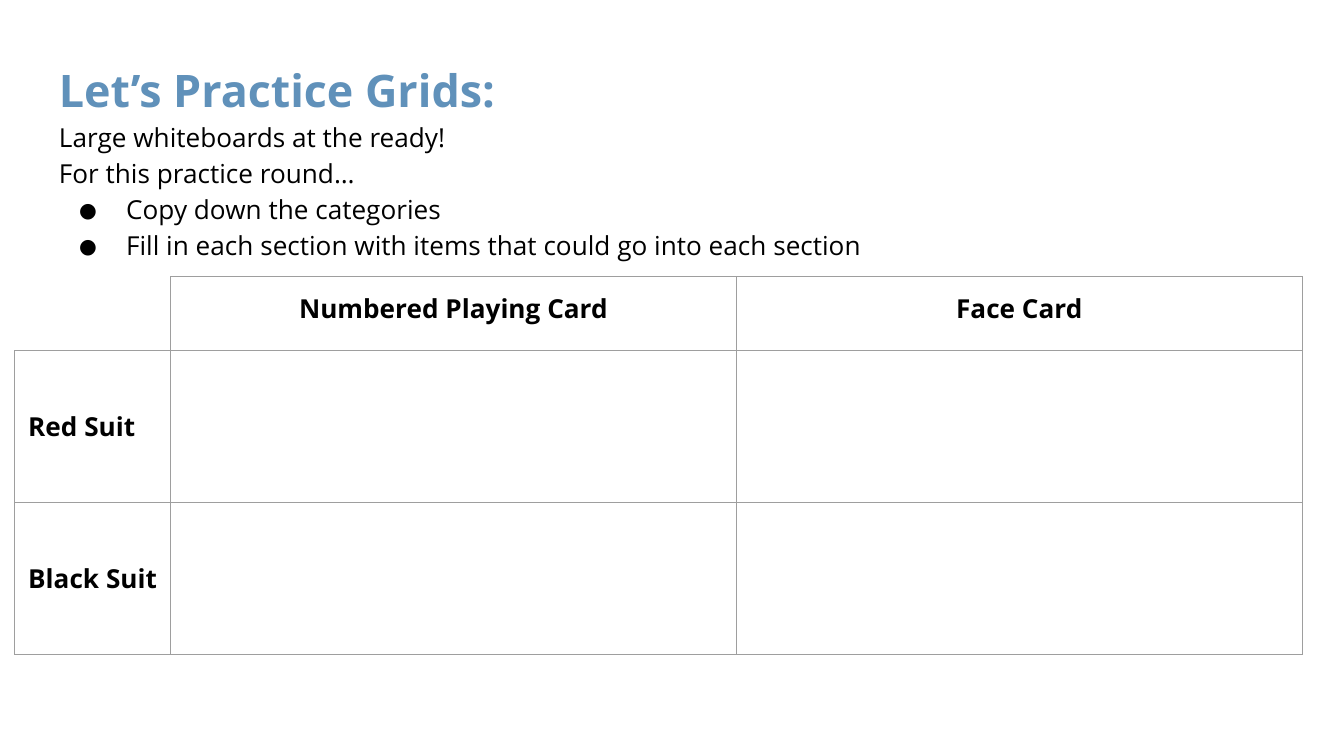
import pptx
import pptx.util
import pptx.dml.color
import pptx.enum.text
import pptx.oxml
import pptx.oxml.ns
from pptx.util import Inches

HEAD = "Let’s Practice Grids:"
BODY = [
    ("Large whiteboards at the ready!", False),
    ("For this practice round…", False),
    ("Copy down the categories", True),
    ("Fill in each section with items that could go into each section", True),
]
GRID = [
    ["", "Numbered Playing Card", "Face Card"],
    ["Red Suit", "", ""],
    ["Black Suit", "", ""],
]
COLS = [1.16, 4.21, 4.21]
ROWS = [0.55, 1.13, 1.13]
THEME = {"font": "Open Sans", "head": "6091BA", "text": "000000",
         "rule": "9E9E9E", "big": 24, "small": 14, "line": 0.75}


def style(para, size, color, bold):
    font = para.font
    font.name = THEME["font"]
    font.size = pptx.util.Pt(size)
    font.bold = bold
    font.color.rgb = pptx.dml.color.RGBColor.from_string(color)


def bullet(para):
    props = para._p.get_or_add_pPr()
    props.set("marL", str(Inches(0.5)))
    props.set("indent", str(Inches(-0.35)))
    for tag in (f'buClr {{}}><a:srgbClr val="{THEME["text"]}"/></a:buClr>',
                'buSzPct {} val="78000"/>',
                f'buFont {{}} typeface="{THEME["font"]}"/>',
                'buChar {} char="●"/>'):
        mark = pptx.oxml.parse_xml("<a:" + tag.format(pptx.oxml.ns.nsdecls("a")))
        props.insert_element_before(mark, "a:tabLst", "a:defRPr", "a:extLst")


def border(cell, bare):
    props = cell._tc.get_or_add_tcPr()
    width = pptx.util.Pt(THEME["line"])
    for spot, side in enumerate("LRTB"):
        paint = ("<a:noFill/>" if side in bare else
                 f'<a:solidFill><a:srgbClr val="{THEME["rule"]}"/></a:solidFill>')
        props.insert(spot, pptx.oxml.parse_xml(
            f'<a:ln{side} {pptx.oxml.ns.nsdecls("a")} w="{width}">'
            f'{paint}</a:ln{side}>'))


def add_intro(slide):
    box = slide.shapes.add_textbox(
        Inches(0.34), Inches(0.31), Inches(9.21), Inches(1.64))
    frame = box.text_frame
    frame.word_wrap = True
    frame.margin_left = frame.margin_right = Inches(0.1)
    frame.margin_top = frame.margin_bottom = Inches(0.1)
    lines = [(HEAD, False)] + BODY
    for num, (text, dot) in enumerate(lines):
        para = frame.add_paragraph() if num else frame.paragraphs[0]
        para.text = text
        para.line_spacing = 1.15
        if num:
            style(para, THEME["small"], THEME["text"], False)
        else:
            style(para, THEME["big"], THEME["head"], True)
        if dot:
            bullet(para)


def add_grid(slide):
    table = slide.shapes.add_table(
        len(ROWS), len(COLS), Inches(0.11), Inches(2.06),
        Inches(sum(COLS)), Inches(sum(ROWS))).table
    table.first_row = table.horz_banding = False
    for col, width in zip(table.columns, COLS):
        col.width = Inches(width)
    for row, height in zip(table.rows, ROWS):
        row.height = Inches(height)
    for r, words in enumerate(GRID):
        for c, text in enumerate(words):
            cell = table.cell(r, c)
            cell.fill.background()
            border(cell, "" if r or c else "LT")
            cell.margin_left = cell.margin_top = cell.margin_bottom = Inches(0.1)
            cell.margin_right = Inches(0.1 if c else 0.08)
            para = cell.text_frame.paragraphs[0]
            para.text = text
            style(para, THEME["small"], THEME["text"], True)
            if r == 0:
                para.alignment = pptx.enum.text.PP_ALIGN.CENTER
            elif c == 0:
                cell.vertical_anchor = pptx.enum.text.MSO_ANCHOR.MIDDLE


def main():
    deck = pptx.Presentation()
    deck.slide_width = Inches(10)
    deck.slide_height = deck.slide_width * 9 // 16
    slide = deck.slides.add_slide(deck.slide_layouts[6])
    add_intro(slide)
    add_grid(slide)
    deck.save("out.pptx")


if __name__ == "__main__":
    main()
